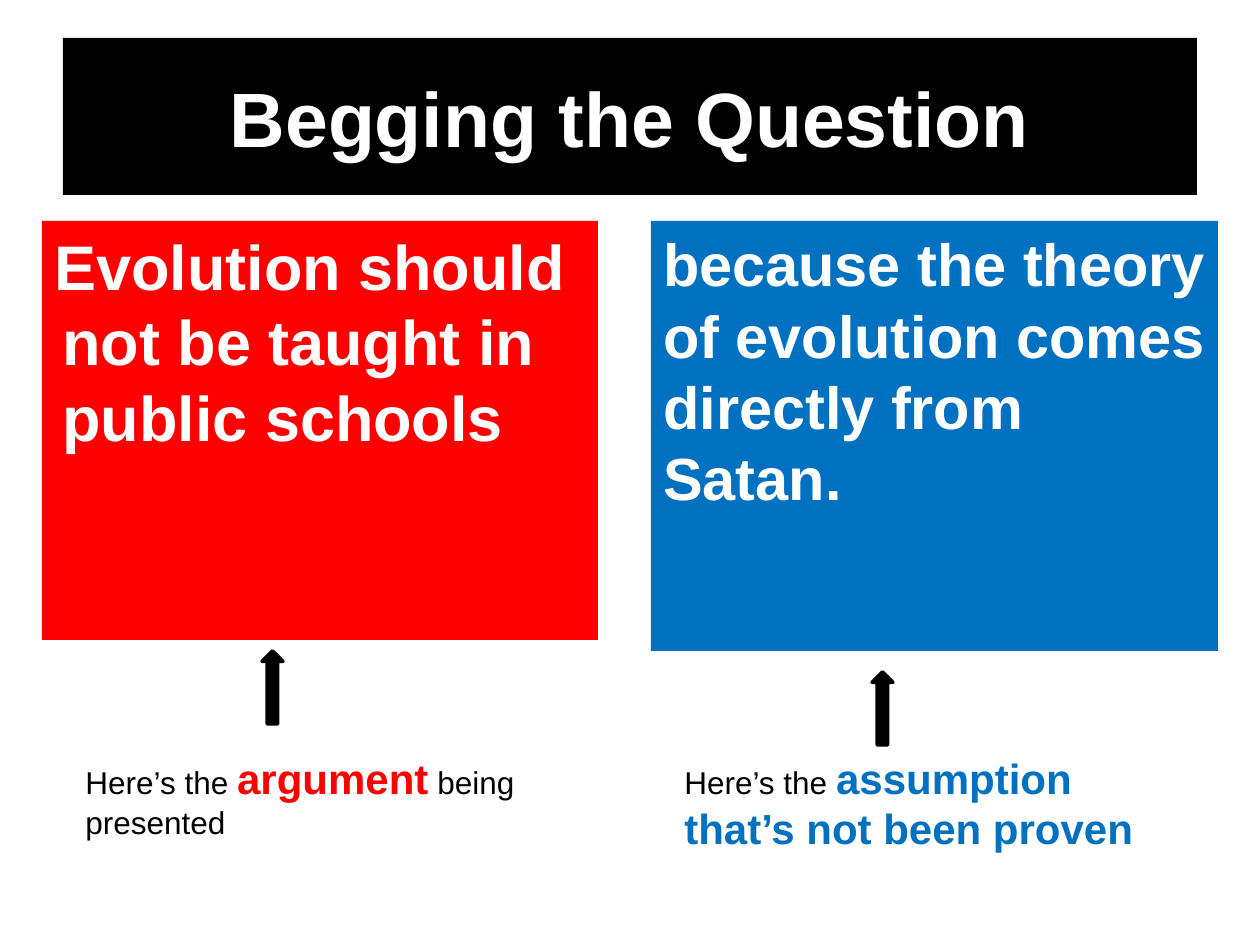
import pptx
import pptx.util
import pptx.dml.color
import pptx.enum.shapes
import pptx.enum.text

SCALE = pptx.util.Inches(1) // 126  # EMU per px
SHAPE = pptx.enum.shapes.MSO_SHAPE
ANCHOR = pptx.enum.text.MSO_ANCHOR
ALIGN = pptx.enum.text.PP_ALIGN
COLORS = {"black": "000000", "white": "FFFFFF", "red": "FF0000", "blue": "0070C0"}

# Content: boxes are left, top, width, height in px
TITLE = ("Begging the Question", (63, 38, 1134, 157))
PANELS = [
    {"text": "Evolution should not be taught in public schools",
     "box": (42, 221, 556, 419), "color": "red", "size": 36, "hang": 8},
    {"text": "because the theory of evolution comes directly from Satan.",
     "box": (651, 221, 567, 430), "color": "blue", "size": 34, "hang": 0},
]
# Caption runs: text, colour, size, bold
CAPTIONS = [
    ((73, 746, 462, 102), [("Here’s the ", "black", 18, False),
                           ("argument", "red", 24, True),
                           (" being presented", "black", 18, False)]),
    ((672, 746, 514, 115), [("Here’s the ", "black", 18, False),
                            ("assumption that’s not been proven", "blue", 24, True)]),
]
ARROWS = [(262, 651), (872, 672)]
ARROW_SIZE = (21, 73)


def px(*values):
    return [pptx.util.Emu(v * SCALE) for v in values]


def rgb(name):
    return pptx.dml.color.RGBColor.from_string(COLORS[name])


def add_block(shapes, kind, box, color):
    sp = shapes.add_shape(kind, *px(*box))
    sp.shadow.inherit = False
    sp.fill.solid()
    sp.fill.fore_color.rgb = rgb(color)
    sp.line.fill.background()
    return sp


def write(sp, runs, anchor=ANCHOR.TOP, align=ALIGN.LEFT, hang=0):
    tf = sp.text_frame
    tf.word_wrap = True
    tf.vertical_anchor = anchor
    p = tf.paragraphs[0]
    p.alignment = align
    if hang:
        pPr = p._p.get_or_add_pPr()
        pPr.set("marL", str(hang * SCALE))
        pPr.set("indent", str(-hang * SCALE))
    for text, color, size, bold in runs:
        r = p.add_run()
        r.text = text
        r.font.name = "Arial"
        r.font.size = pptx.util.Pt(size)
        r.font.bold = bold
        r.font.color.rgb = rgb(color)


prs = pptx.Presentation()
prs.slide_width, prs.slide_height = px(1260, 945)
s = prs.slides.add_slide(prs.slide_layouts[6])

# Title bar
title, box = TITLE
write(add_block(s.shapes, SHAPE.RECTANGLE, box, "black"),
      [(title, "white", 44, True)], anchor=ANCHOR.MIDDLE, align=ALIGN.CENTER)

# Argument and assumption panels
for panel in PANELS:
    sp = add_block(s.shapes, SHAPE.RECTANGLE, panel["box"], panel["color"])
    write(sp, [(panel["text"], "white", panel["size"], True)], hang=panel["hang"])

# Captions with the arrows that point up to the panels
for (box, runs), position in zip(CAPTIONS, ARROWS):
    sp = s.shapes.add_textbox(*px(*box))
    write(sp, runs)
    sp.text_frame.auto_size = pptx.enum.text.MSO_AUTO_SIZE.SHAPE_TO_FIT_TEXT
    arrow = add_block(s.shapes, SHAPE.UP_ARROW, position + ARROW_SIZE, "black")
    arrow.line.color.rgb = rgb("black")
    arrow.line.width = pptx.util.Pt(2)

prs.save("out.pptx")
